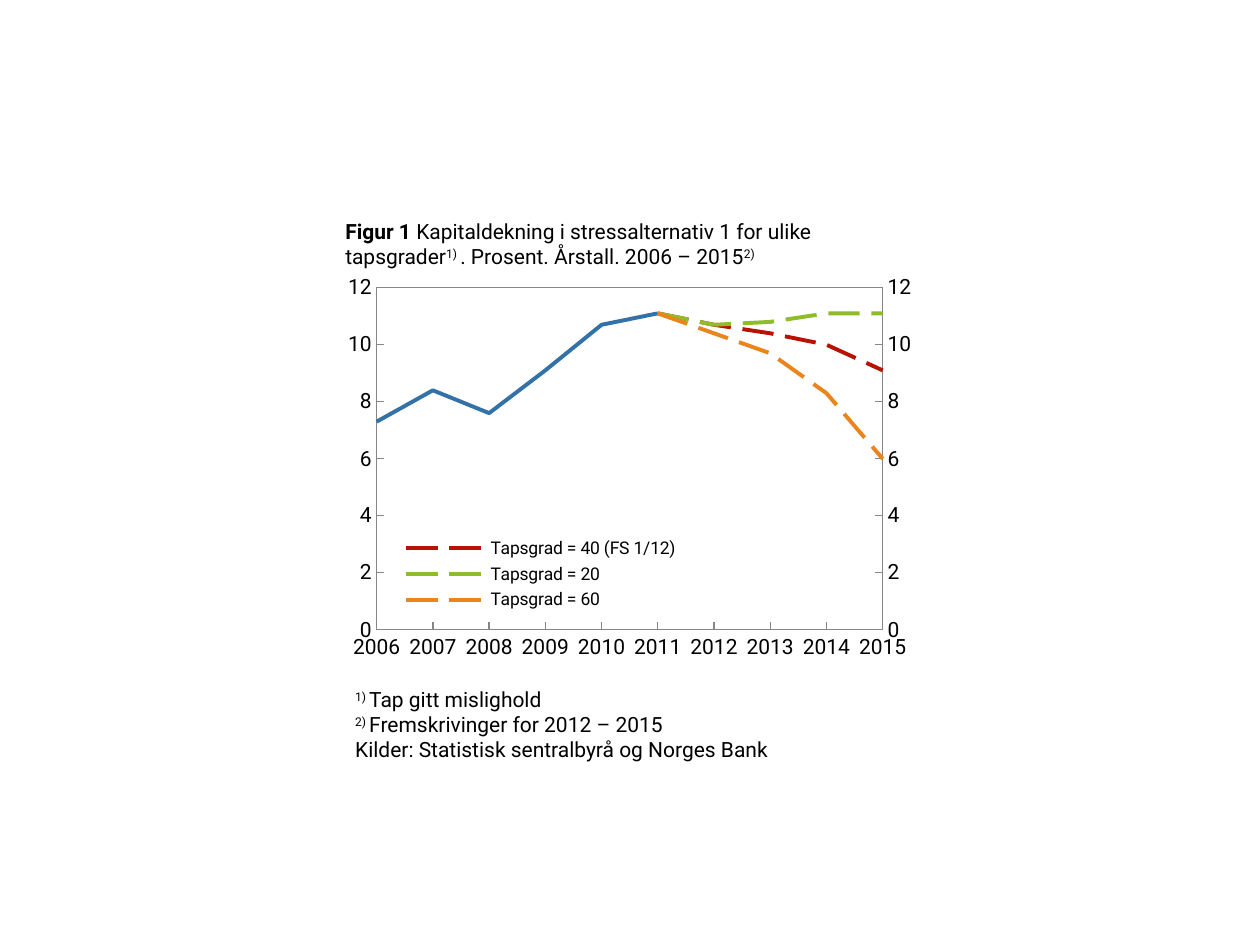
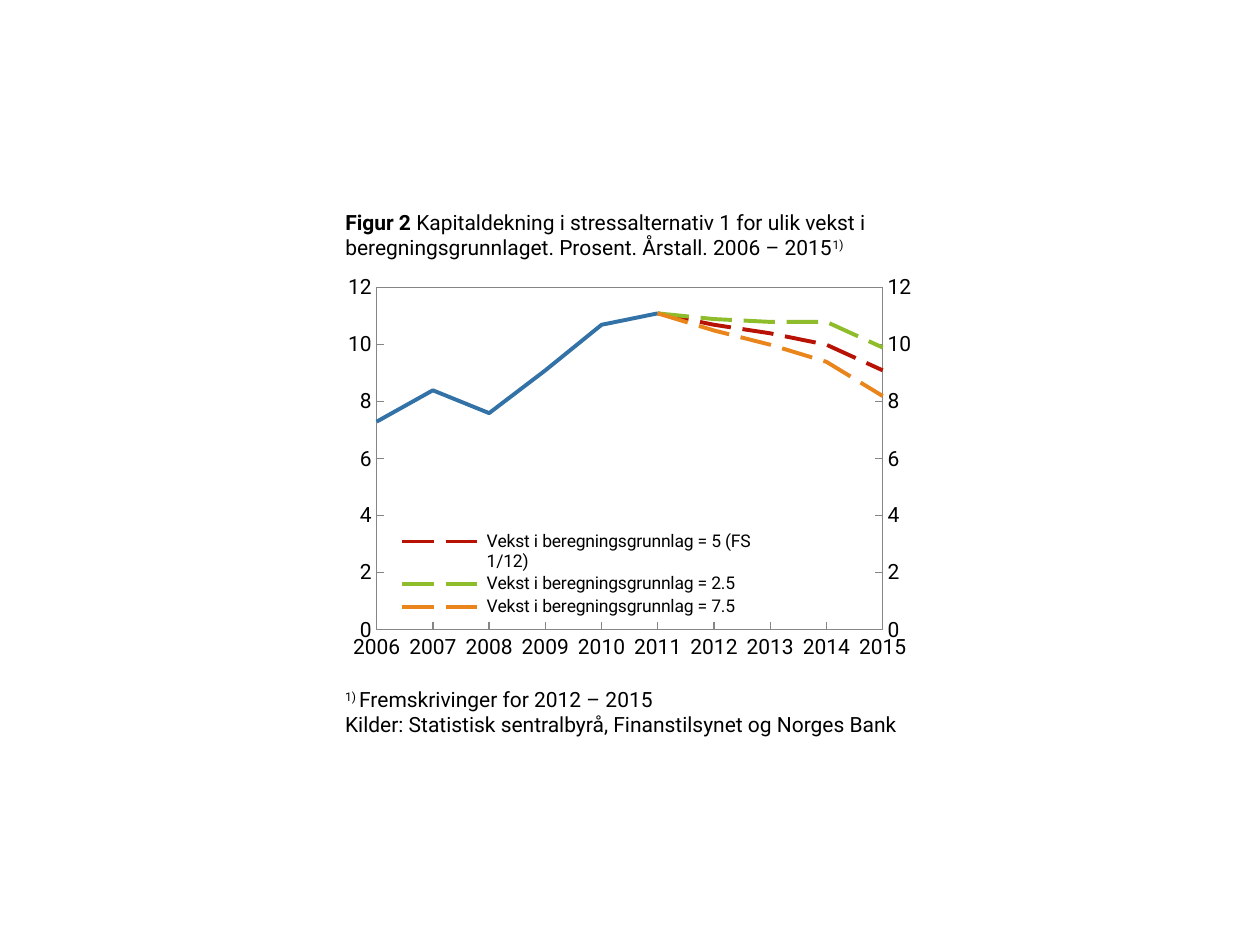
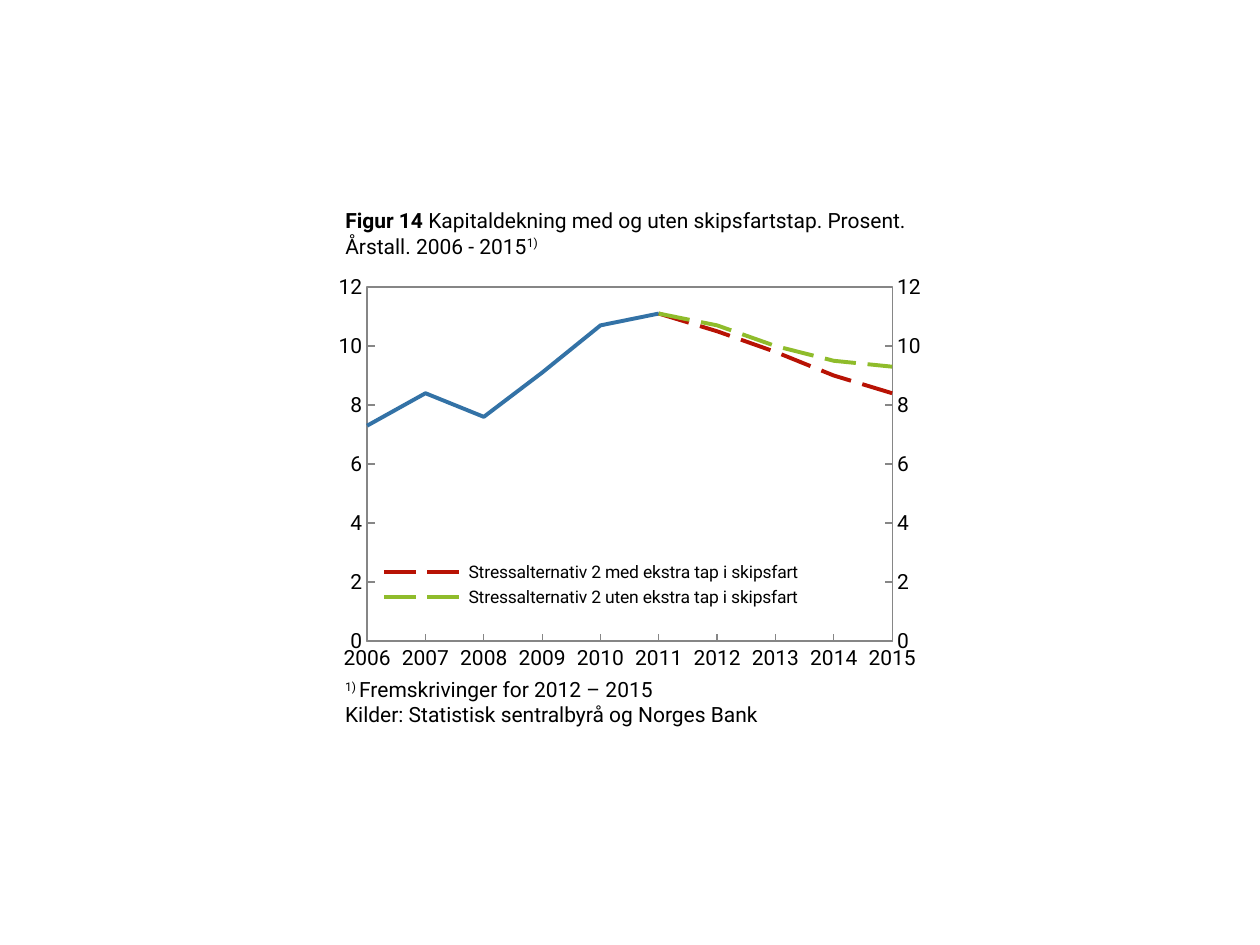
from copy import deepcopy
from lxml import etree
from pptx import Presentation
from pptx.chart.data import CategoryChartData
from pptx.dml.color import RGBColor
from pptx.enum.chart import XL_CHART_TYPE, XL_LEGEND_POSITION, XL_MARKER_STYLE, XL_TICK_MARK
from pptx.enum.dml import MSO_LINE
from pptx.enum.text import MSO_ANCHOR, MSO_AUTO_SIZE, PP_ALIGN
from pptx.util import Inches, Pt

LINE, TOP = XL_CHART_TYPE.LINE, XL_LEGEND_POSITION.TOP
INSIDE, BARE = XL_TICK_MARK.INSIDE, XL_MARKER_STYLE.NONE
DASH, LEFT = MSO_LINE.LONG_DASH, PP_ALIGN.LEFT
MIDDLE, FIXED = MSO_ANCHOR.MIDDLE, MSO_AUTO_SIZE.NONE

FONT = "Roboto"
HEX = {"text": "000000", "axis": "868686", "past": "3372A6",
       "red": "B81204", "green": "8FBC2B", "orange": "E9851B"}
COLOR = {name: RGBColor.from_string(code) for name, code in HEX.items()}
PATHS = ["red", "green", "orange"]

# Content: runs are (text, style), where "b" is bold and "^" is raised
YEARS = [str(year) for year in range(2006, 2016)]
PAST = [7.3, 8.4, 7.6, 9.1, 10.7, 11.1]
AHEAD = [("1) ", "^"), ("Fremskrivinger for 2012 – 2015", "")]
SOURCE = [("Kilder: Statistisk sentralbyrå og Norges Bank", "")]
BASE = [10.7, 10.4, 10, 9.1]

FIGURES = [
    {"title": [("Figur 1 ", "b"),
               ("Kapitaldekning i stressalternativ 1 for ulike tapsgrader", ""),
               ("1) ", "^"), (". Prosent. Årstall. 2006 – 2015", ""), ("2)", "^")],
     "title_y": (1.62, 0.63),
     "paths": {"Tapsgrad = 40 (FS 1/12)": BASE,
               "Tapsgrad = 20": [10.7, 10.8, 11.1, 11.1],
               "Tapsgrad = 60": [10.4, 9.7, 8.3, 6]},
     "right": ("Series 5", [0]),
     "plot": (0.074, 0.033, 0.851, 0.862), "legend": (0.09, 0.65, 0.52, 0.21),
     "notes": [[("1) ", "^"), ("Tap gitt mislighold", "")],
               [("2) ", "^"), AHEAD[1]], SOURCE],
     "notes_at": (2.72, 5.4, 0.71)},
    {"title": [("Figur 2 ", "b"),
               ("Kapitaldekning i stressalternativ 1 for ulik vekst i "
                "beregningsgrunnlaget. Prosent. Årstall. 2006 – 2015", ""), ("1)", "^")],
     "title_y": (1.47, 0.79),
     "paths": {"Vekst i beregningsgrunnlag = 5 (FS 1/12)": BASE,
               "Vekst i beregningsgrunnlag = 2.5": [10.9, 10.8, 10.8, 9.9],
               "Vekst i beregningsgrunnlag = 7.5": [10.5, 10, 9.4, 8.2]},
     "right": ("Series 5", [0]),
     "plot": (0.074, 0.033, 0.851, 0.862), "legend": (0.1, 0.64, 0.62, 0.23),
     "notes": [AHEAD, [("Kilder: Statistisk sentralbyrå, Finanstilsynet og Norges Bank", "")]],
     "notes_at": (2.64, 5.4, 0.6)},
    {"title": [("Figur 14 ", "b"),
               ("Kapitaldekning med og uten skipsfartstap. Prosent. "
                "Årstall. 2006 - 2015", ""), ("1)", "^")],
     "title_y": (1.55, 0.6),
     "paths": {"Stressalternativ 2 med ekstra tap i skipsfart": [10.5, 9.8, 9, 8.4],
               "Stressalternativ 2 uten ekstra tap i skipsfart": [10.7, 10, 9.5, 9.3]},
     "right": ("Series 4", []),
     "plot": (0.058, 0.024, 0.883, 0.899), "legend": (0.06, 0.71, 0.75, 0.14),
     "notes": [AHEAD, SOURCE],
     "notes_at": (2.64, 5.32, 0.6)},
]

# Shared places, in inches
X, WIDE = 2.64, 4.72
CHART_Y, CHART_H = 2.18, 3.15


# Text
def style(font, size=12):
    font.name, font.size = FONT, Pt(size)
    font.color.rgb = COLOR["text"]


def write(para, runs):
    para.alignment = LEFT
    for text, kind in runs:
        run = para.add_run()
        run.text = text
        style(run.font)
        run.font.bold = kind == "b"
        if kind == "^":
            run.font._element.set("baseline", "30000")


def add_title(slide, fig):
    title = slide.shapes.title
    top, high = fig["title_y"]
    title.left, title.top = Inches(X), Inches(top)
    title.width, title.height = Inches(WIDE), Inches(high)
    frame = title.text_frame
    frame.auto_size, frame.vertical_anchor = FIXED, MIDDLE
    write(frame.paragraphs[0], fig["title"])


def add_notes(slide, fig):
    left, top, high = fig["notes_at"]
    box = slide.shapes.add_textbox(Inches(left), Inches(top), Inches(WIDE), Inches(high))
    frame = box.text_frame
    frame.word_wrap = True
    for i, runs in enumerate(fig["notes"]):
        para = frame.add_paragraph() if i else frame.paragraphs[0]
        props = para._p.get_or_add_pPr()
        props.set("marL", str(Inches(0.38)))
        props.set("indent", str(-Inches(0.38)))
        write(para, runs)


# Chart XML helpers
def node(tag, val=None):
    part = etree.Element("{http://schemas.openxmlformats.org/drawingml/2006/chart}" + tag)
    if val is not None:
        part.set("val", str(val))
    return part


def drop(root, tag):
    for part in root.xpath("c:" + tag):
        root.remove(part)


def layout(box, inner=False):
    outer, manual = node("layout"), node("manualLayout")
    outer.append(manual)
    if inner:
        manual.append(node("layoutTarget", "inner"))
    for tag in ("xMode", "yMode"):
        manual.append(node(tag, "edge"))
    for tag, share in zip("xywh", box):
        manual.append(node(tag, share))
    return outer


def add_right(area):
    """Move the last series to a second value axis on the right."""
    left = area.xpath("c:lineChart")[0]
    right = deepcopy(left)
    for part in right.xpath("c:ser")[:-1]:
        right.remove(part)
    left.remove(left.xpath("c:ser")[-1])
    left.addnext(right)
    cat, val = area.xpath("c:catAx")[0], area.xpath("c:valAx")[0]
    cat2, val2 = deepcopy(cat), deepcopy(val)
    val.addnext(val2)
    val2.addnext(cat2)
    swap = {cat.xpath("c:axId/@val")[0]: "5001", val.xpath("c:axId/@val")[0]: "5002"}
    for root in (right, cat2, val2):
        for part in root.xpath("c:axId | c:crossAx"):
            part.set("val", swap[part.get("val")])
    cat2.xpath("c:delete")[0].set("val", "1")
    val2.xpath("c:axPos")[0].set("val", "r")
    val2.xpath("c:crosses")[0].set("val", "max")


def add_chart(slide, fig):
    data = CategoryChartData(number_format="0.0")
    data.categories = YEARS
    rows = [("Series 1", PAST)]
    rows += [(name, [None] * 5 + PAST[-1:] + vals) for name, vals in fig["paths"].items()]
    rows.append(fig["right"])
    for name, vals in rows:
        data.add_series(name, vals + [None] * (len(YEARS) - len(vals)))
    chart = slide.shapes.add_chart(LINE, Inches(X), Inches(CHART_Y), Inches(WIDE),
                                   Inches(CHART_H), data).chart
    chart.has_title = False
    style(chart.font)
    plot = chart.plots[0]
    plot.vary_by_categories = False

    # Series
    hues = ["past"] + PATHS[:len(fig["paths"])] + ["past"]
    for i, (series, hue) in enumerate(zip(plot.series, hues)):
        series.smooth = False
        series.marker.style = BARE
        line = series.format.line
        line.color.rgb, line.width = COLOR[hue], Pt(2.25)
        if 0 < i < len(hues) - 1:
            line.dash_style = DASH

    # Axes
    val = chart.value_axis
    for axis in (chart.category_axis, val):
        axis.major_tick_mark = INSIDE
        axis.has_major_gridlines = False
        axis.format.line.color.rgb = COLOR["axis"]
        axis.format.line.width = Pt(0.75)
        style(axis.tick_labels.font)
    val.minimum_scale, val.maximum_scale = 0, 12
    val.tick_labels.number_format = "0"
    val.tick_labels.number_format_is_linked = False
    drop(val._element, "crossBetween")
    val._element.xpath("c:crosses")[0].addnext(node("crossBetween", "midCat"))
    val.major_unit = 2

    # Plot area with its frame
    area = chart._chartSpace.xpath("c:chart/c:plotArea")[0]
    add_right(area)
    drop(area, "layout")
    area.insert(0, layout(fig["plot"], inner=True))
    frame = deepcopy(val._element.xpath("c:spPr")[0])
    drop(area, "spPr")
    area.append(frame)

    # Legend without the solid and the right-hand series
    chart.has_legend = True
    legend = chart.legend
    legend.position, legend.include_in_layout = TOP, False
    style(legend.font, 10)
    root = legend._element
    drop(root, "layout")
    spot = root.xpath("c:legendPos")[0]
    spot.addnext(layout(fig["legend"]))
    for index in (len(rows) - 1, 0):
        entry = node("legendEntry")
        entry.append(node("idx", index))
        entry.append(node("delete", 1))
        spot.addnext(entry)


def main():
    deck = Presentation()
    deck.slide_width, deck.slide_height = Inches(10), Inches(7.5)
    for fig in FIGURES:
        slide = deck.slides.add_slide(deck.slide_layouts[5])
        add_chart(slide, fig)
        add_title(slide, fig)
        add_notes(slide, fig)
    deck.save("out.pptx")


if __name__ == "__main__":
    main()
